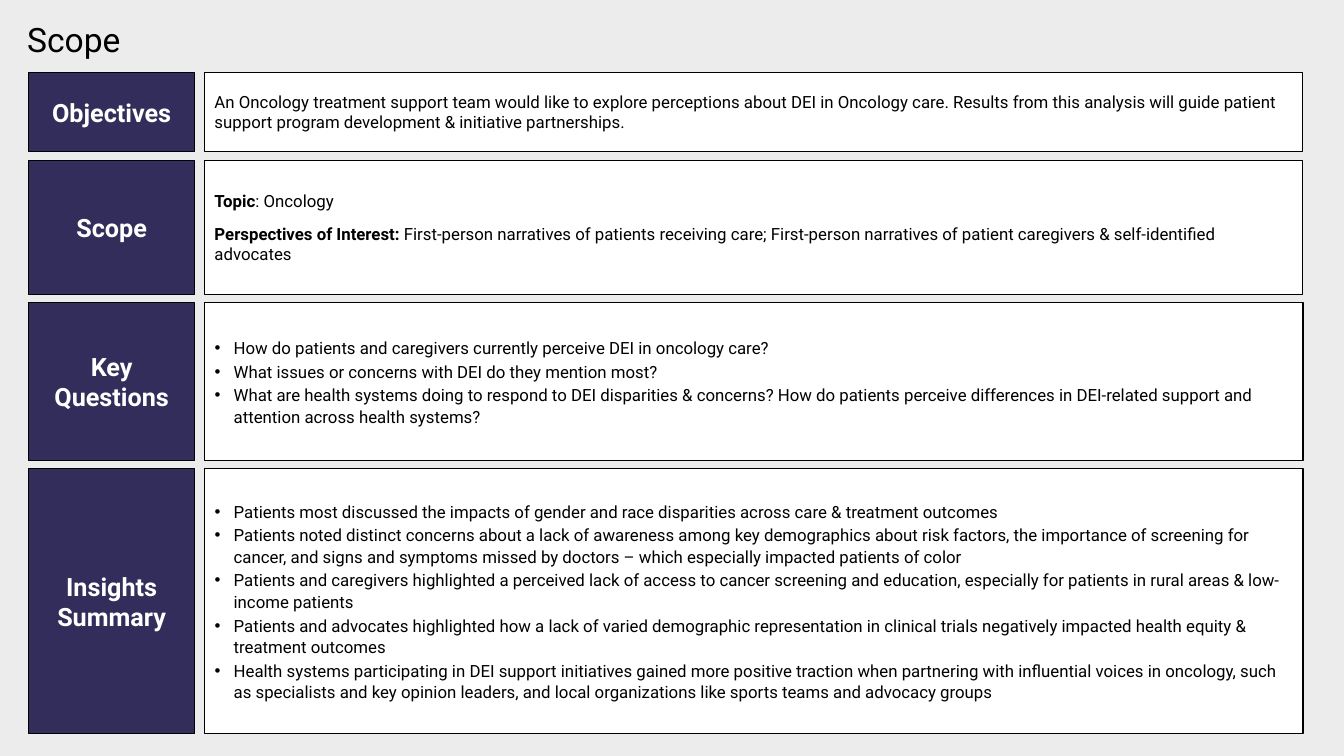
from pptx import Presentation
from pptx import util as u
from pptx.dml import color
from pptx.enum import shapes, text

TITLE_FRAME = (1.65, -2.13, 88.86, 15.2)
LABEL_LEFT, LABEL_WIDTH = 2.14, 12.34
BODY_LEFT, BODY_WIDTH = 15.21, 81.74
FIRST_TOP, GAP = 9.6, 1.1

OBJECTIVES = [
    [("An Oncology treatment support team would like to explore perceptions about DEI in Oncology care. "
      "Results from this analysis will guide patient support program development & initiative partnerships.", False)],
]
SCOPE = [
    [("Topic", True), (": Oncology", False)],
    [("Perspectives of Interest: ", True),
     ("First-person narratives of patients receiving care; First-person narratives of patient caregivers "
      "& self-identified advocates", False)],
]
QUESTIONS = [
    "How do patients and caregivers currently perceive DEI in oncology care?",
    "What issues or concerns with DEI do they mention most?",
    "What are health systems doing to respond to DEI disparities & concerns? How do patients perceive "
    "differences in DEI-related support and attention across health systems?",
]
INSIGHTS = [
    "Patients most discussed the impacts of gender and race disparities across care & treatment outcomes",
    "Patients noted distinct concerns about a lack of awareness among key demographics about risk factors, "
    "the importance of screening for cancer, and signs and symptoms missed by doctors – which especially "
    "impacted patients of color",
    "Patients and caregivers highlighted a perceived lack of access to cancer screening and education, "
    "especially for patients in rural areas & low-income patients",
    "Patients and advocates highlighted how a lack of varied demographic representation in clinical trials "
    "negatively impacted health equity & treatment outcomes",
    "Health systems participating in DEI support initiatives gained more positive traction when partnering "
    "with influential voices in oncology, such as specialists and key opinion leaders, and local "
    "organizations like sports teams and advocacy groups",
]


def rgb(value):
    """Turn a hex string into a colour."""
    return color.RGBColor.from_string(value)


def assign(target, values):
    """Set every attribute named in a dict of format values."""
    for name, value in values.items():
        setattr(target, name, value)


class ScopeSlide:
    """Holds the style and the slide, with a method for each kind of element."""

    font, ink, paper, accent, backdrop = "Roboto", "000000", "FFFFFF", "322D5A", "ECECEC"
    label_size, body_size, title_size = 36, 24, 48
    margins = {"margin_left": u.Inches(0.2), "margin_right": u.Inches(0.2),
               "margin_top": u.Inches(0.1), "margin_bottom": u.Inches(0.1)}

    def __init__(self, deck):
        """Add a two-content slide with a plain backdrop."""
        self.deck = deck
        self.page = deck.slides.add_slide(deck.slide_layouts[3])
        self.page.background.fill.solid()
        self.page.background.fill.fore_color.rgb = rgb(self.backdrop)

    def place(self, box, left, top, width, height):
        """Position a box by percentages of the slide's size."""
        across, down = self.deck.slide_width / 100, self.deck.slide_height / 100
        assign(box, {"left": round(left * across), "top": round(top * down),
                     "width": round(width * across), "height": round(height * down)})

    def paint(self, box, fill):
        """Give a box its fill and thin outline."""
        box.fill.solid()
        box.fill.fore_color.rgb = rgb(fill)
        box.line.color.rgb = rgb(self.ink)
        box.line.width = u.Pt(1.5)

    def add_words(self, box, paragraphs, size, ink, spacing, frame=None):
        """Fill a box with paragraphs made of (words, bold) spans."""
        assign(box.text_frame, {"word_wrap": True, "auto_size": text.MSO_AUTO_SIZE.NONE,
                                "vertical_anchor": text.MSO_ANCHOR.MIDDLE, **(frame or {})})
        for index, spans in enumerate(paragraphs):
            para = box.text_frame.paragraphs[0] if index == 0 else box.text_frame.add_paragraph()
            assign(para, {"alignment": text.PP_ALIGN.LEFT, "space_before": u.Pt(0), **spacing})
            for words, bold in spans:
                span = para.add_run()
                span.text = words
                assign(span.font, {"name": self.font, "size": u.Pt(size), "bold": bold})
                span.font.color.rgb = rgb(ink)

    def title(self, words):
        """Set the slide title."""
        box = self.page.shapes.title
        self.place(box, *TITLE_FRAME)
        self.add_words(box, [[(words, False)]], self.title_size, self.ink,
                       {"line_spacing": 0.9, "space_before": u.Pt(10)})

    def panel(self, fill, *frame):
        """Add an outlined rectangle."""
        box = self.page.shapes.add_shape(shapes.MSO_SHAPE.RECTANGLE, 0, 0, 0, 0)
        box.shadow.inherit = False
        self.place(box, *frame)
        self.paint(box, fill)
        return box

    def label(self, words, top, height):
        """Add the dark heading box of a row."""
        box = self.panel(self.accent, LABEL_LEFT, top, LABEL_WIDTH, height)
        self.add_words(box, [[(words, True)]], self.label_size, self.paper,
                       {"alignment": text.PP_ALIGN.CENTER})

    def prose(self, paragraphs, top, height):
        """Add a white box of plain paragraphs."""
        box = self.panel(self.paper, BODY_LEFT, top, BODY_WIDTH, height)
        self.add_words(box, paragraphs, self.body_size, self.ink, {"space_after": u.Pt(18)}, self.margins)
        if len(paragraphs) > 1:
            box.text_frame.paragraphs[-1].space_after = u.Pt(6)

    def bullets(self, items, top, height, slot):
        """Turn a body placeholder into a white bulleted box."""
        box = self.page.placeholders[slot]
        self.place(box, BODY_LEFT, top, BODY_WIDTH, height)
        self.paint(box, self.paper)
        self.add_words(box, [[(item, False)] for item in items], self.body_size, self.ink,
                       {"line_spacing": 1.07, "space_after": u.Pt(3)}, self.margins)
        for para in box.text_frame.paragraphs:
            properties = para._p.get_or_add_pPr()
            properties.set("marL", str(u.Inches(0.38)))
            properties.set("indent", str(-u.Inches(0.38)))


def main():
    """Build the deck and save it."""
    deck = Presentation()
    assign(deck, {"slide_width": u.Inches(26.67), "slide_height": u.Inches(15)})
    scope = ScopeSlide(deck)
    scope.title("Scope")
    rows = [
        ("Objectives", 10.47, scope.prose, (OBJECTIVES,), {}),
        ("Scope", 17.8, scope.prose, (SCOPE,), {}),
        ("Key Questions", 20.8, scope.bullets, (QUESTIONS,), {"slot": 1}),
        ("Insights Summary", 35.07, scope.bullets, (INSIGHTS,), {"slot": 2}),
    ]
    top = FIRST_TOP
    for heading, height, fill_body, content, options in rows:
        scope.label(heading, top, height)
        fill_body(*content, top, height, **options)
        top += height + GAP
    deck.save("out.pptx")


if __name__ == "__main__":
    main()
